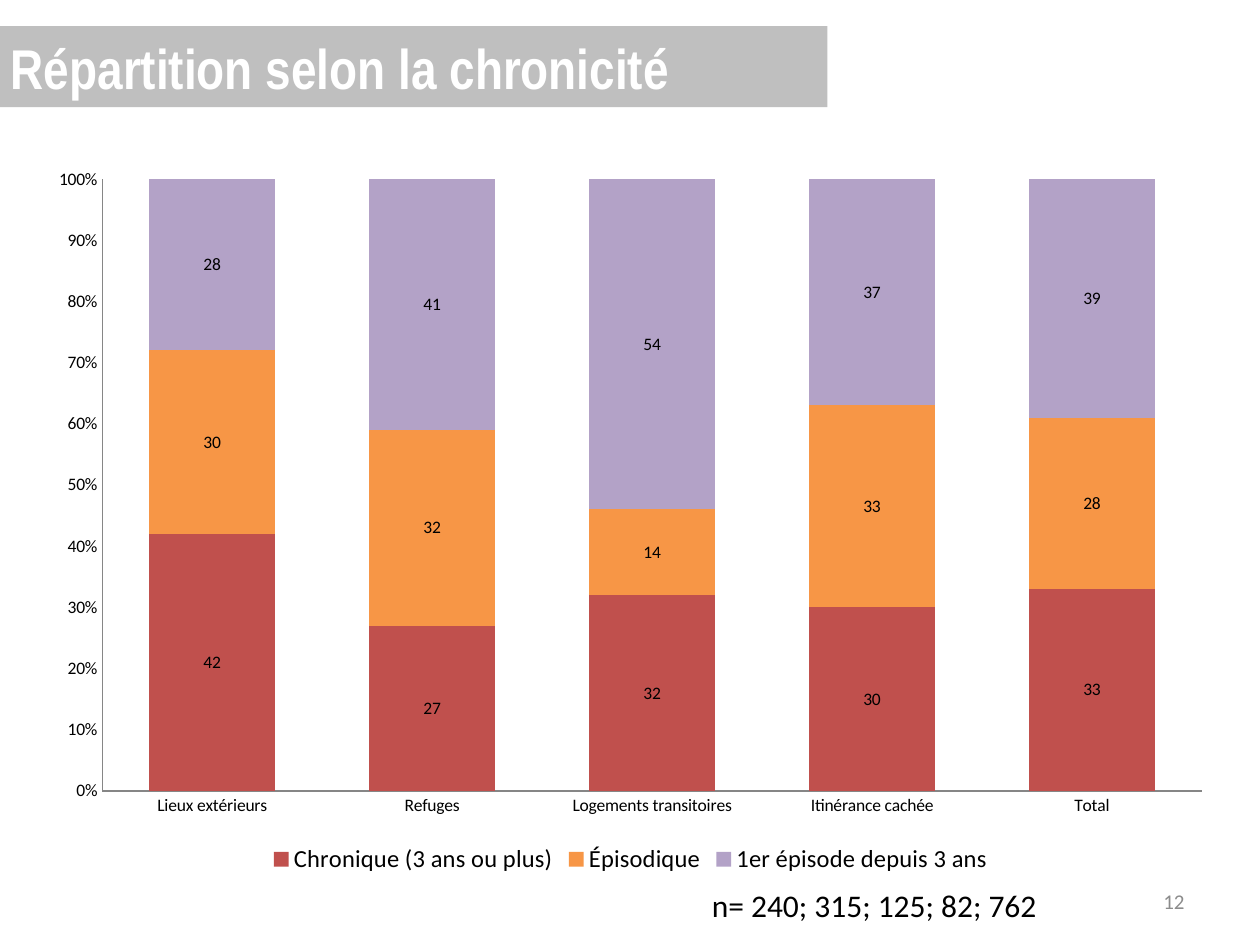
from dataclasses import dataclass

from pptx import Presentation
from pptx.chart.data import CategoryChartData
from pptx.dml.color import RGBColor
from pptx.enum.chart import XL_CHART_TYPE as ChartType
from pptx.enum.chart import XL_LABEL_POSITION as LabelPosition
from pptx.enum.chart import XL_LEGEND_POSITION as LegendPosition
from pptx.enum.chart import XL_TICK_MARK as TickMark
from pptx.enum.shapes import MSO_SHAPE as ShapeType
from pptx.enum.text import MSO_ANCHOR as Anchor
from pptx.enum.text import PP_ALIGN as Align
from pptx.util import Cm, Pt

COLORS = {
    "banner": "BFBFBF",
    "white": "FFFFFF",
    "black": "000000",
    "page_number": "8C8C8C",
    "axis": "868686",
    "chronic": "C0504D",
    "episodic": "F79646",
    "first_episode": "B3A2C7",
}
CATEGORIES = ["Lieux extérieurs", "Refuges", "Logements transitoires",
              "Itinérance cachée", "Total"]


@dataclass
class Box:
    left: float
    top: float
    width: float
    height: float

    def lengths(self) -> list:
        return [Cm(value) for value in (self.left, self.top, self.width, self.height)]


@dataclass
class Series:
    name: str
    values: list[int]
    color: str


SERIES = [
    Series("Chronique (3 ans ou plus)", [42, 27, 32, 30, 33], "chronic"),
    Series("Épisodique", [30, 32, 14, 33, 28], "episodic"),
    Series("1er épisode depuis 3 ans", [28, 41, 54, 37, 39], "first_episode"),
]


def rgb(name: str) -> RGBColor:
    return RGBColor.from_string(COLORS[name])


def set_font(font, size: float, color: str = "black", name: str = "Calibri",
             bold: bool = False) -> None:
    font.size = Pt(size)
    font.name = name
    font.bold = bold
    font.color.rgb = rgb(color)


def write_text(shape, text: str, align=Align.LEFT, anchor=Anchor.TOP, **font_format) -> None:
    frame = shape.text_frame
    frame.word_wrap = True
    frame.vertical_anchor = anchor
    paragraph = frame.paragraphs[0]
    paragraph.alignment = align
    run = paragraph.add_run()
    run.text = text
    set_font(run.font, **font_format)


def add_banner(slide, box: Box, text: str) -> None:
    banner = slide.shapes.add_shape(ShapeType.RECTANGLE, *box.lengths())
    banner.shadow.inherit = False
    banner.fill.solid()
    banner.fill.fore_color.rgb = rgb("banner")
    banner.line.fill.background()
    write_text(banner, text, anchor=Anchor.MIDDLE, size=32, color="white",
               name="Arial Narrow", bold=True)


def style_axis(axis) -> None:
    axis.has_major_gridlines = False
    axis.major_tick_mark = TickMark.NONE
    axis.minor_tick_mark = TickMark.NONE
    axis.format.line.color.rgb = rgb("axis")
    axis.format.line.width = Pt(0.75)
    set_font(axis.tick_labels.font, 10)


def add_chronicity_chart(slide, box: Box) -> None:
    data = CategoryChartData()
    data.categories = CATEGORIES
    for series in SERIES:
        data.add_series(series.name, series.values)
    chart = slide.shapes.add_chart(ChartType.COLUMN_STACKED_100, *box.lengths(), data).chart
    chart.has_title = False
    set_font(chart.font, 10)

    style_axis(chart.category_axis)
    style_axis(chart.value_axis)
    chart.value_axis.tick_labels.number_format = "0%"
    chart.value_axis.tick_labels.number_format_is_linked = False

    chart.has_legend = True
    chart.legend.position = LegendPosition.BOTTOM
    chart.legend.include_in_layout = False
    set_font(chart.legend.font, 14)

    plot = chart.plots[0]
    plot.gap_width = 75
    plot.overlap = 100
    plot.vary_by_categories = False
    for drawn, series in zip(plot.series, SERIES):
        drawn.format.fill.solid()
        drawn.format.fill.fore_color.rgb = rgb(series.color)
        labels = drawn.data_labels
        labels.show_value = True
        labels.position = LabelPosition.CENTER
        set_font(labels.font, 10)


def main() -> None:
    presentation = Presentation()
    presentation.slide_width, presentation.slide_height = Cm(25.4), Cm(19.05)
    slide = presentation.slides.add_slide(presentation.slide_layouts[6])

    page_number = slide.shapes.add_textbox(*Box(18.21, 17.65, 5.92, 1.02).lengths())
    write_text(page_number, "12", align=Align.RIGHT, anchor=Anchor.MIDDLE,
               size=12, color="page_number")
    add_banner(slide, Box(-0.03, 0.53, 16.71, 1.63), "Répartition selon la chronicité")
    sample_sizes = slide.shapes.add_textbox(*Box(14.1, 17.73, 8.99, 1.02).lengths())
    write_text(sample_sizes, "n= 240; 315; 125; 82; 762", size=18)
    add_chronicity_chart(slide, Box(0.71, 3.12, 24, 14.61))

    presentation.save("out.pptx")


if __name__ == "__main__":
    main()
